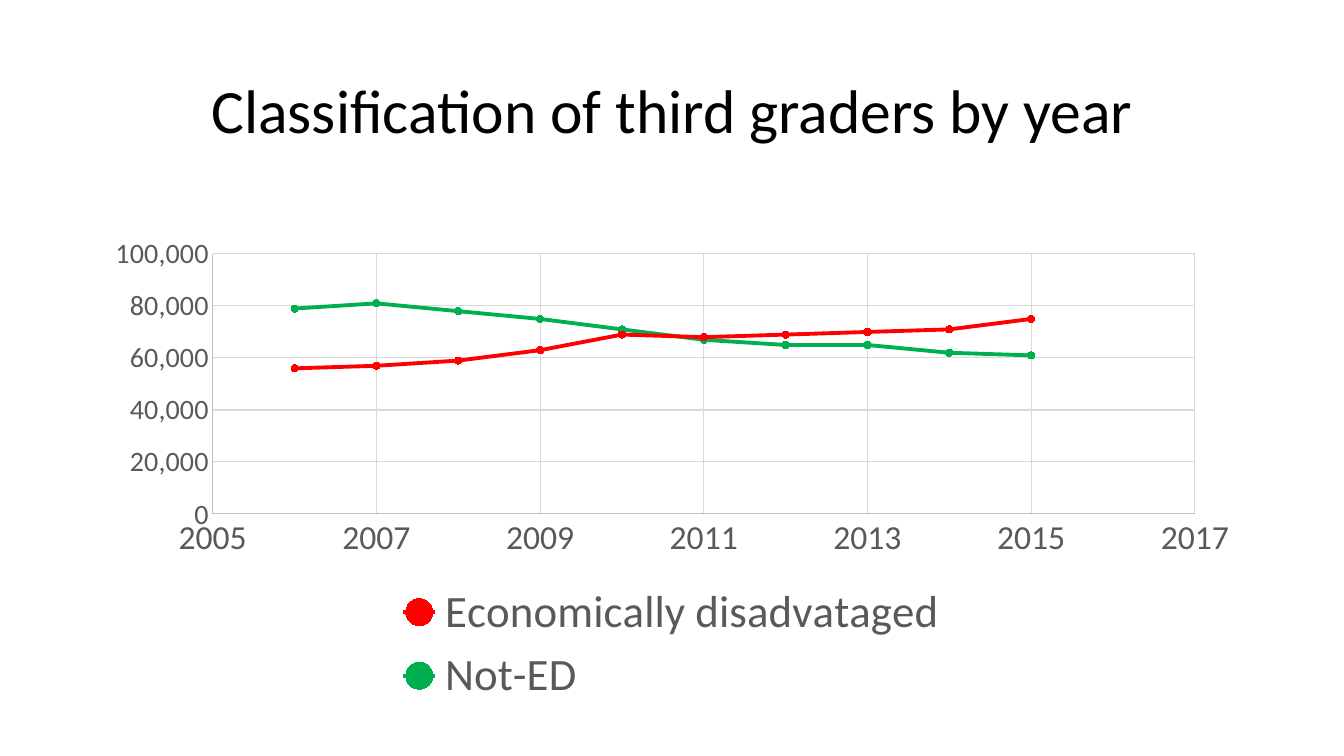
from pptx import Presentation
from pptx.chart.data import XyChartData
from pptx.dml.color import RGBColor
from pptx.enum import chart as ch, text
from pptx.oxml import parse_xml
from pptx.oxml.ns import nsdecls
from pptx.util import Inches, Pt

FONT = "Calibri"
COLORS = {"title": "000000", "label": "595959", "axis": "BFBFBF",
          "grid": "D9D9D9", "disadvantaged": "FF0000", "other": "00B050"}
YEARS = range(2006, 2016)
SERIES = [
    ("Economically disadvataged", "disadvantaged",
     [56000, 57000, 59000, 63000, 69000, 68000, 69000, 70000, 71000, 75000]),
    ("Not-ED", "other",
     [79000, 81000, 78000, 75000, 71000, 67000, 65000, 65000, 62000, 61000]),
]
LEFT, WIDTH = 0.92, 11.5
CHART_TOP, CHART_HEIGHT = 2.25, 4.83


def color(name):
    return RGBColor.from_string(COLORS[name])


def style_font(font, size, name):
    font.name, font.size = FONT, Pt(size)
    font.color.rgb = color(name)


def style_line(line, name, width):
    line.color.rgb = color(name)
    line.width = Pt(width)


def set_layout(parent, index, x, y, w, h, inner=False):
    """Place a chart part by its box in inches from the chart's corner."""
    shares = (x / WIDTH, y / CHART_HEIGHT, w / WIDTH, h / CHART_HEIGHT)
    target = '<c:layoutTarget val="inner"/>' if inner else ""
    modes = '<c:xMode val="edge"/><c:yMode val="edge"/>'
    box = "".join(f'<c:{k} val="{v:.4f}"/>' for k, v in zip("xywh", shares))
    layout = parse_xml(f'<c:layout {nsdecls("c")}><c:manualLayout>'
                       f'{target}{modes}{box}</c:manualLayout></c:layout>')
    for old in parent.findall(layout.tag):
        parent.remove(old)
    parent.insert(index, layout)


def add_title(slide, words):
    tf = slide.shapes.add_textbox(Inches(LEFT), Inches(0.4),
                                  Inches(WIDTH), Inches(1.45)).text_frame
    tf.word_wrap = True
    tf.vertical_anchor = text.MSO_ANCHOR.MIDDLE
    tf.text = words
    p = tf.paragraphs[0]
    p.alignment = text.PP_ALIGN.CENTER
    p.line_spacing = 0.9
    style_font(p.runs[0].font, 44, "title")


def style_axis(axis, size, low, high, step, number_format):
    axis.minimum_scale, axis.maximum_scale, axis.major_unit = low, high, step
    axis.has_major_gridlines = True
    axis.major_tick_mark = axis.minor_tick_mark = ch.XL_TICK_MARK.NONE
    style_line(axis.format.line, "axis", 0.75)
    style_line(axis.major_gridlines.format.line, "grid", 0.75)
    labels = axis.tick_labels
    labels.number_format, labels.number_format_is_linked = number_format, False
    style_font(labels.font, size, "label")


def style_series(series, name):
    series.smooth = False
    style_line(series.format.line, name, 2.75)
    marker = series.marker
    marker.style, marker.size = ch.XL_MARKER_STYLE.CIRCLE, 5
    marker.format.fill.solid()
    marker.format.fill.fore_color.rgb = color(name)
    style_line(marker.format.line, name, 0.75)


def add_year_chart(slide):
    data = XyChartData()
    for name, _, counts in SERIES:
        series = data.add_series(name)
        for year, count in zip(YEARS, counts):
            series.add_data_point(year, count)
    chart = slide.shapes.add_chart(
        ch.XL_CHART_TYPE.XY_SCATTER_LINES, Inches(LEFT), Inches(CHART_TOP),
        Inches(WIDTH), Inches(CHART_HEIGHT), data).chart
    chart.has_title = False
    style_font(chart.font, 10, "title")
    plot = chart.plots[0]
    plot.vary_by_categories = False
    for series, (_, name, _) in zip(plot.series, SERIES):
        style_series(series, name)
    style_axis(chart.category_axis, 24, 2005, 2017, 2, "General")
    style_axis(chart.value_axis, 20, 0, 100000, 20000, "#,##0")
    chart.has_legend = True
    legend = chart.legend
    legend.position = ch.XL_LEGEND_POSITION.BOTTOM
    legend.include_in_layout = False
    style_font(legend.font, 32, "label")
    set_layout(legend._element, 1, 2.98, 3.47, 5.52, 1.34)
    set_layout(chart._chartSpace.chart.plotArea, 0, 1.19, 0.27, 9.74, 2.58,
               inner=True)


def main():
    prs = Presentation()
    prs.slide_width, prs.slide_height = Inches(13.33), Inches(7.5)
    slide = prs.slides.add_slide(prs.slide_layouts[6])
    add_title(slide, "Classification of third graders by year")
    add_year_chart(slide)
    prs.save("out.pptx")


if __name__ == "__main__":
    main()
